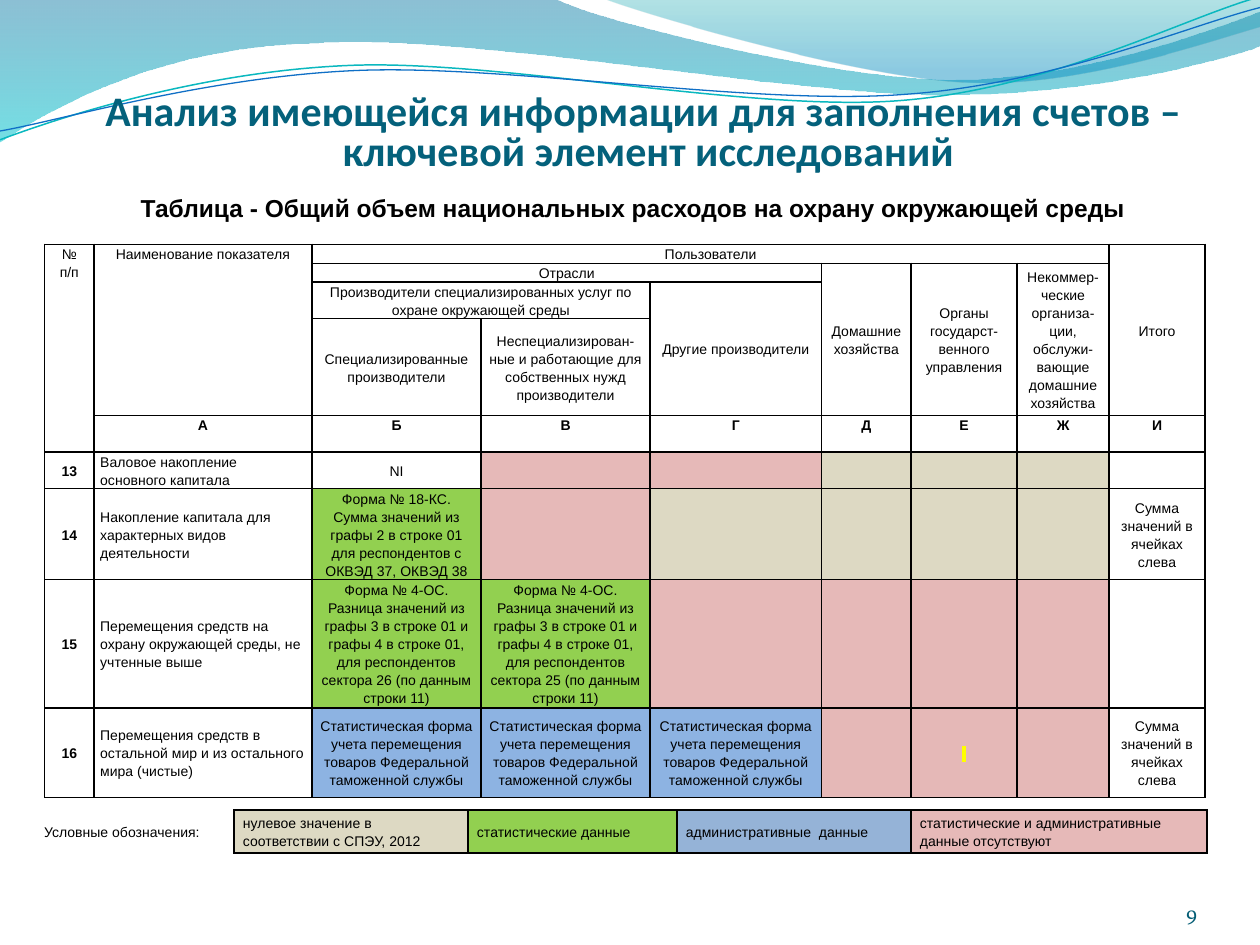
from collections import namedtuple

from lxml import etree
from pptx import Presentation
from pptx import util as u
from pptx.dml.color import RGBColor
from pptx.enum import text as t
from pptx.oxml.ns import qn

COLORS = {
    "black": "000000", "title": "04617B", "number": "045D75", "mark": "FFFF00",
    "zero": "DDD9C3", "statistics": "92D050", "customs": "8DB3E2",
    "administrative": "95B3D7", "missing": "E6B9B8", "absent": "E5B8B7",
    "deep": "0074A1", "aqua": "00C6CF", "teal": "00A1A9", "sky": "008BBF",
    "teal line": "0AB8BF", "blue line": "0F6FC6",
}
FILL_KEYS = {"z": "zero", "s": "statistics", "c": "customs",
             "d": "administrative", "m": "missing", "a": "absent"}
WIDTH, HEIGHT = u.Inches(10), u.Inches(7.5)
Box = namedtuple("Box", "left top width height")
CENTER, LEFT, RIGHT = t.PP_ALIGN.CENTER, t.PP_ALIGN.LEFT, t.PP_ALIGN.RIGHT
MIDDLE, TOP, BOTTOM = t.MSO_ANCHOR.MIDDLE, t.MSO_ANCHOR.TOP, t.MSO_ANCHOR.BOTTOM

# Waves: a start point, then lines (2 numbers) and curves (6 numbers),
# in tenths of the box width
WAVE_AREAS = [
    ([(0, 0), (4.4, -.01), (4.76, .17, 6.64, .63, 7.58, .63),
      (8.53, .63, 9.58, .26, 10, .09), (10.01, .36),
      (9.83, .44, 8.7, .76, 7.46, .75), (6.22, .75, 3.82, .28, 2.57, .34),
      (1.29, .36, .46, .83, -.01, 1.13)],
     [(0, "deep", 45), (1, "aqua", 55)]),
    ([(4.79, -.01), (5.09, .11, 6.82, .62, 7.69, .65),
      (8.56, .69, 9.61, .32, 10, .21), (10, 0)],
     [(0, "teal", 30), (.8, "sky", 45)]),
]
WAVE_LINES = [
    ([(0, 1.11), (.48, .93, 1.58, .57, 2.77, .52), (3.95, .47, 5.93, .89, 7.13, .8),
      (8.33, .71, 9.38, .15, 9.98, -.02)], "teal line", .85),
    ([(0, 1.04), (.47, .96, 1.64, .61, 2.83, .56), (4.03, .51, 5.97, .84, 7.17, .75),
      (8.36, .67, 9.41, .21, 10, .06)], "blue line", .75),
]

# Account table: widths and heights as grid weights, header cells by position and span
COLUMNS = [.39, 1.73, 1.34, 1.34, 1.36, .71, .84, .73, .76]
ROWS = [.15, .15, .29, .77, .29, .29, .72, 1.02, .71]
HEADERS = [
    (0, 0, 5, 1, "№ п/п"), (0, 1, 4, 1, "Наименование показателя"),
    (0, 2, 1, 6, "Пользователи"), (0, 8, 4, 1, "Итого"),
    (1, 2, 1, 3, "Отрасли"), (1, 5, 3, 1, "Домашние хозяйства"),
    (1, 6, 3, 1, "Органы государст-венного управления"),
    (1, 7, 3, 1, "Некоммер-ческие организа-ции, обслужи-вающие домашние хозяйства"),
    (2, 2, 1, 2, "Производители специализированных услуг по охране окружающей среды"),
    (2, 4, 2, 1, "Другие производители"),
    (3, 2, 1, 1, "Специализированные производители"),
    (3, 3, 1, 1, "Неспециализирован-ные и работающие для собственных нужд производители"),
]
LETTERS_ROW = 4
TRANSFERS = ("Форма № 4-ОС. Разница значений из графы 3 в строке 01 и графы 4 в строке 01, "
             "для респондентов сектора {} (по данным строки 11)")
CUSTOMS = "Статистическая форма учета перемещения товаров Федеральной таможенной службы"
SUM = "Сумма значений в ячейках слева"
# Number, indicator, texts by column, fill key of every column
INDICATORS = [
    ("13", "Валовое накопление основного капитала", {2: "NI"}, "...mmzzz."),
    ("14", "Накопление капитала для характерных видов деятельности",
     {2: "Форма № 18-КС. Сумма значений из графы 2 в строке 01 для респондентов "
         "с ОКВЭД 37, ОКВЭД 38", 8: SUM}, "..smzzzz."),
    ("15", "Перемещения средств на охрану окружающей среды, не учтенные выше",
     {2: TRANSFERS.format(26), 3: TRANSFERS.format(25)}, "..ssmmam."),
    ("16", "Перемещения средств в остальной мир и из остального мира (чистые)",
     {2: CUSTOMS, 3: CUSTOMS, 4: CUSTOMS, 6: " ", 8: SUM}, "..cccaaa."),
]
LEGEND_COLUMNS = [1.58, 1.86, 1.66, 1.86, 2.35]
LEGEND = [("Условные обозначения:", "."),
          ("нулевое значение в соответствии с СПЭУ, 2012", "z"),
          ("статистические данные", "s"), ("административные  данные", "d"),
          ("статистические и административные данные отсутствуют", "m")]


def rgb(name):
    return RGBColor.from_string(COLORS[name])


def area(left, top, width, height):
    """Box given in percent of the slide."""
    return Box(*(int(share * side / 100) for share, side in
                 zip((left, top, width, height), (WIDTH, HEIGHT) * 2)))


def style(paragraph, size, color="black", bold=False, font="Arial", align=CENTER):
    paragraph.alignment = align
    for run in paragraph.runs:
        run.font.size, run.font.bold, run.font.name = u.Pt(size), bold, font
        run.font.color.rgb = rgb(color)


def add_wave(slide, box, segments, closed):
    unit = box.width / 10
    points = [(box.left + segment[i] * unit, box.top + segment[i + 1] * unit)
              for segment in segments for i in range(0, len(segment), 2)]
    builder = slide.shapes.build_freeform(*points[0])
    builder.add_line_segments(points[1:], close=closed)
    wave = builder.convert_to_shape()
    wave.shadow.inherit = False
    # Bend every three strokes of a curve into one Bezier stroke
    strokes = iter(list(wave.element.iter(qn("a:lnTo"))))
    for segment in segments[1:]:
        parts = [next(strokes) for _ in range(len(segment) // 2)]
        if len(parts) == 3:
            curve = etree.Element(qn("a:cubicBezTo"))
            parts[0].addprevious(curve)
            for part in parts:
                curve.append(part[0])
                part.getparent().remove(part)
    return wave


def add_waves(slide, box):
    for segments, stops in WAVE_AREAS:
        wave = add_wave(slide, box, segments, True)
        wave.line.fill.background()
        wave.fill.gradient()
        wave.fill.gradient_angle = 270
        for stop, (position, color, _) in zip(wave.fill.gradient_stops, stops):
            stop.position, stop.color.rgb = position, rgb(color)
        for shade, (_, _, opacity) in zip(wave.element.iter(qn("a:srgbClr")), stops):
            etree.SubElement(shade, qn("a:alpha"), val=str(opacity * 1000))
    for segments, color, weight in WAVE_LINES:
        wave = add_wave(slide, box, segments, False)
        wave.fill.background()
        wave.line.color.rgb, wave.line.width = rgb(color), u.Pt(weight)


def add_title(slide, box):
    title = slide.shapes.title
    title.element.getparent().append(title.element)  # in front of the waves
    title.left, title.top, title.width, title.height = box
    frame = title.text_frame
    frame.text = "Анализ имеющейся информации для заполнения счетов – \vключевой элемент исследований"
    frame.auto_size, frame.vertical_anchor = t.MSO_AUTO_SIZE.NONE, BOTTOM
    frame.margin_left = frame.margin_right = frame.margin_bottom = 0
    frame.paragraphs[0].line_spacing = .8
    style(frame.paragraphs[0], 24, "title", True, "Calibri")


def add_label(slide, box, words, anchor=TOP, margin=.05, **look):
    frame = slide.shapes.add_textbox(*box).text_frame
    frame.word_wrap, frame.vertical_anchor = True, anchor
    frame.margin_left = frame.margin_right = u.Inches(2 * margin)
    frame.margin_top = frame.margin_bottom = u.Inches(margin)
    frame.text = words
    style(frame.paragraphs[0], **look)


def add_grid(slide, box, columns, rows):
    grid = slide.shapes.add_table(len(rows), len(columns), *box).table
    grid.first_row = grid.horz_banding = False
    for column, share in zip(grid.columns, columns):
        column.width = int(box.width * share / sum(columns))
    for row, share in zip(grid.rows, rows):
        row.height = int(box.height * share / sum(rows))
    return grid


def fill_cell(cell, words="", key=".", bold=False, align=CENTER, anchor=MIDDLE,
              margin=.05, sides="LRTB"):
    cell.text, cell.vertical_anchor = words, anchor
    cell.margin_left = cell.margin_right = u.Inches(margin)
    cell.margin_top = cell.margin_bottom = 0
    paragraph = cell.text_frame.paragraphs[0]
    paragraph.line_spacing = u.Pt(10.3)
    style(paragraph, 8, bold=bold, align=align)
    # Keeps the paragraph end from stretching the row
    etree.SubElement(paragraph._p, qn("a:endParaRPr"), sz="800")
    if key in FILL_KEYS:
        cell.fill.solid()
        cell.fill.fore_color.rgb = rgb(FILL_KEYS[key])
    else:
        cell.fill.background()
    for place, side in enumerate(sides):
        border = etree.Element(qn("a:ln" + side), w=str(u.Pt(1)))
        paint = etree.SubElement(border, qn("a:solidFill"))
        etree.SubElement(paint, qn("a:srgbClr"), val=COLORS["black"])
        cell._tc.tcPr.insert(place, border)


def add_accounts(slide, box):
    grid = add_grid(slide, box, COLUMNS, ROWS)
    cells = {}
    for row, column, down, across, words in HEADERS:
        if down * across > 1:
            grid.cell(row, column).merge(grid.cell(row + down - 1, column + across - 1))
        top_aligned = row == 0 and column < 2
        cells[row, column] = dict(words=words, anchor=TOP if top_aligned else MIDDLE)
    for column, letter in enumerate("АБВГДЕЖИ", 1):
        cells[LETTERS_ROW, column] = dict(words=letter, bold=True, anchor=TOP)
    for row, (number, name, texts, keys) in enumerate(INDICATORS, LETTERS_ROW + 1):
        for column, key in enumerate(keys):
            cells[row, column] = dict(words=texts.get(column, ""), key=key)
        cells[row, 0] = dict(words=number, bold=True)
        cells[row, 1] = dict(words=name, align=LEFT)
    for row in range(len(ROWS)):
        for column in range(len(COLUMNS)):
            fill_cell(grid.cell(row, column), **cells.get((row, column), {}))
    # Highlighted space in the government column
    marked = grid.cell(len(ROWS) - 1, 6).text_frame.paragraphs[0].runs[0]
    highlight = etree.Element(qn("a:highlight"))
    etree.SubElement(highlight, qn("a:srgbClr"), val=COLORS["mark"])
    marked.font._element.find(qn("a:solidFill")).addnext(highlight)


def add_legend(slide, box):
    grid = add_grid(slide, box, LEGEND_COLUMNS, [1])
    for column, (words, key) in enumerate(LEGEND):
        fill_cell(grid.cell(0, column), words, key, align=LEFT, margin=.07,
                  sides="LRTB" if column else "R")


def main():
    deck = Presentation()
    deck.slide_width, deck.slide_height = WIDTH, HEIGHT
    slide = deck.slides.add_slide(deck.slide_layouts[5])
    add_waves(slide, area(0, 0, 100, 15))
    add_title(slide, area(3, 8, 96.9, 10.53))
    add_label(slide, area(86.7, 92.67, 8.3, 5.33), "9", BOTTOM, 0,
              size=12, color="number", font="Vollkorn", align=RIGHT)
    add_accounts(slide, area(3.55, 25.87, 92.1, 58.53))
    add_legend(slide, area(2.8, 85.73, 93, 4.53))
    add_label(slide, area(4.4, 19.73, 91.7, 4.53),
              "Таблица - Общий объем национальных расходов на охрану окружающей среды",
              size=14, bold=True)
    deck.save("out.pptx")


if __name__ == "__main__":
    main()
